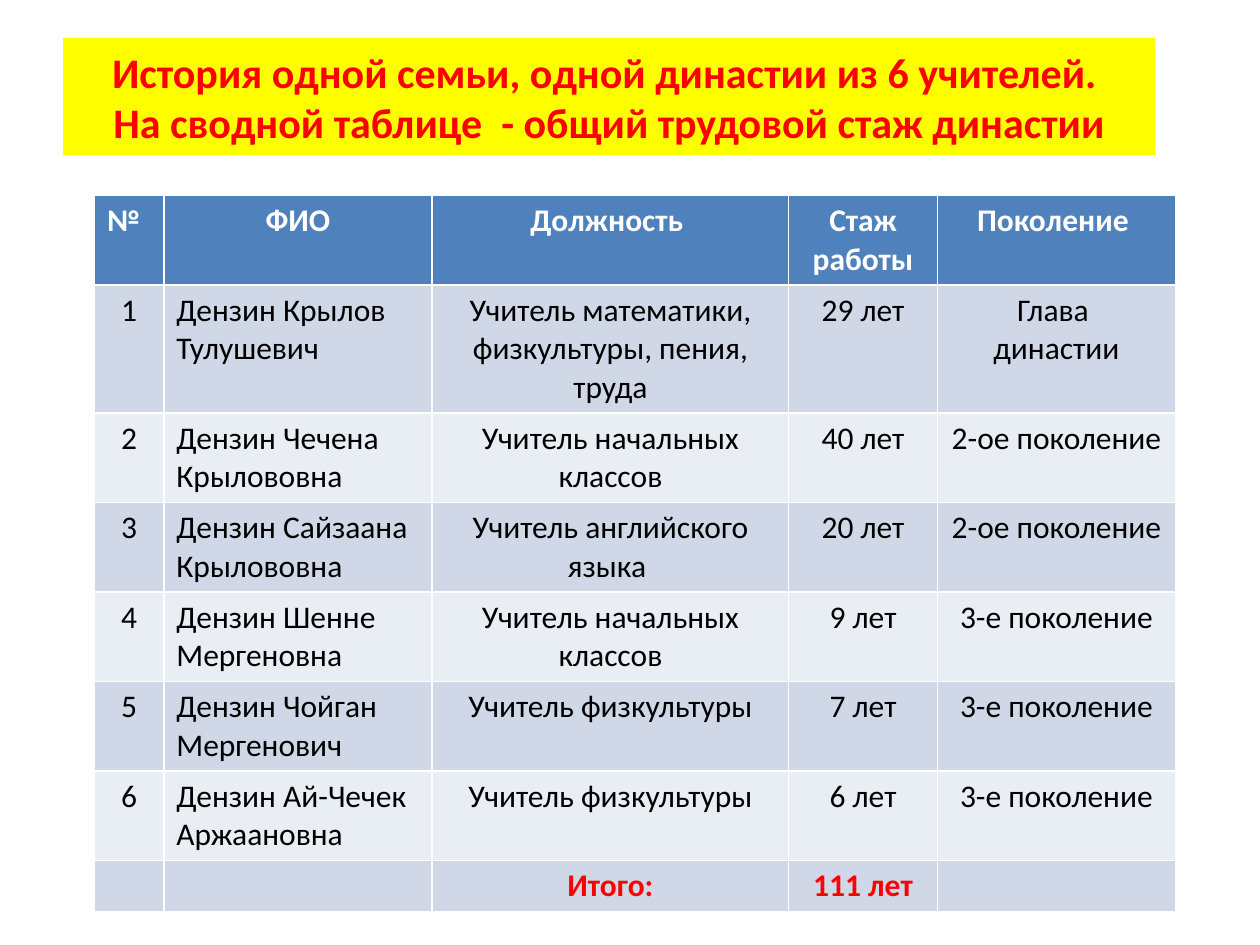
from pptx import Presentation
from pptx.dml.color import RGBColor as RGB
from pptx.enum.text import MSO_ANCHOR as Anchor, PP_ALIGN as Align
from pptx.util import Inches, Pt

TITLE = ("История одной семьи, одной династии из 6 учителей. ",
         "На сводной таблице  - общий трудовой стаж династии")
HEAD = ("№", "ФИО", "Должность ", "Стаж работы", "Поколение ")
STAFF = (
    ("Дензин Крылов Тулушевич",
     "Учитель математики, физкультуры, пения, труда", "29 лет", "Глава \nдинастии"),
    ("Дензин Чечена Крылововна", "Учитель начальных классов", "40 лет", "2-ое поколение"),
    ("Дензин Сайзаана Крылововна", "Учитель английского языка ", "20 лет", "2-ое поколение"),
    ("Дензин Шенне Мергеновна", "Учитель начальных классов", "9 лет", "3-е поколение"),
    ("Дензин Чойган Мергенович", "Учитель физкультуры", "7 лет", "3-е поколение"),
    ("Дензин Ай-Чечек Аржаановна", "Учитель физкультуры", "6 лет", "3-е поколение"),
)
TOTAL = ("", "", "Итого:", "111 лет", "")
WIDTHS = (0.55, 2.13, 2.83, 1.18, 1.89)
HEIGHT = 0.4
RED = "FF0000"
BANDS = ("E9EDF4", "D0D8E8")


def paint(fill, color):
    """Fill an area with one solid colour."""
    fill.solid()
    fill.fore_color.rgb = RGB.from_string(color)


def style(para, size, color, bold, align):
    """Set the font and alignment of a paragraph."""
    para.alignment = align
    font = para.font
    font.name, font.size, font.bold = "Calibri", Pt(size), bold
    font.color.rgb = RGB.from_string(color)


def add_title(slide):
    """Place the two-line heading on its yellow band."""
    title = slide.shapes.title
    title.left, title.top = Inches(0.5), Inches(0.3)
    title.width, title.height = Inches(8.67), Inches(0.93)
    paint(title.fill, "FFFF00")
    title.text_frame.vertical_anchor = Anchor.MIDDLE
    para = title.text_frame.paragraphs[0]
    first, second = TITLE
    para.add_run().text = first
    para.add_line_break()
    para.add_run().text = second
    style(para, 24, RED, True, Align.CENTER)


def fill_row(row, texts, back, color, bold, left):
    """Write one table row, with the column numbered left set to the left."""
    for col, (cell, text) in enumerate(zip(row.cells, texts)):
        paint(cell.fill, back)
        cell.text = text
        for para in cell.text_frame.paragraphs:
            style(para, 18, color, bold, Align.LEFT if col == left else Align.CENTER)


def add_staff(slide):
    """Build the table of teachers with its header and total."""
    body = [(str(num), *person) for num, person in enumerate(STAFF, 1)]
    count = len(body) + 2
    table = slide.shapes.add_table(
        count, len(WIDTHS), Inches(0.75), Inches(1.55),
        Inches(sum(WIDTHS)), Inches(HEIGHT * count)).table
    for col, width in zip(table.columns, WIDTHS):
        col.width = Inches(width)
    fill_row(table.rows[0], HEAD, "4F81BD", "FFFFFF", True, 0)
    for num, texts in enumerate(body, 1):
        fill_row(table.rows[num], texts, BANDS[num % 2], "000000", False, 1)
    last = count - 1
    fill_row(table.rows[last], TOTAL, BANDS[last % 2], RED, True, None)


def main():
    """Build and save the slide."""
    deck = Presentation()
    deck.slide_width, deck.slide_height = Inches(10), Inches(7.5)
    slide = deck.slides.add_slide(deck.slide_layouts[5])
    add_title(slide)
    add_staff(slide)
    deck.save("out.pptx")


if __name__ == "__main__":
    main()
